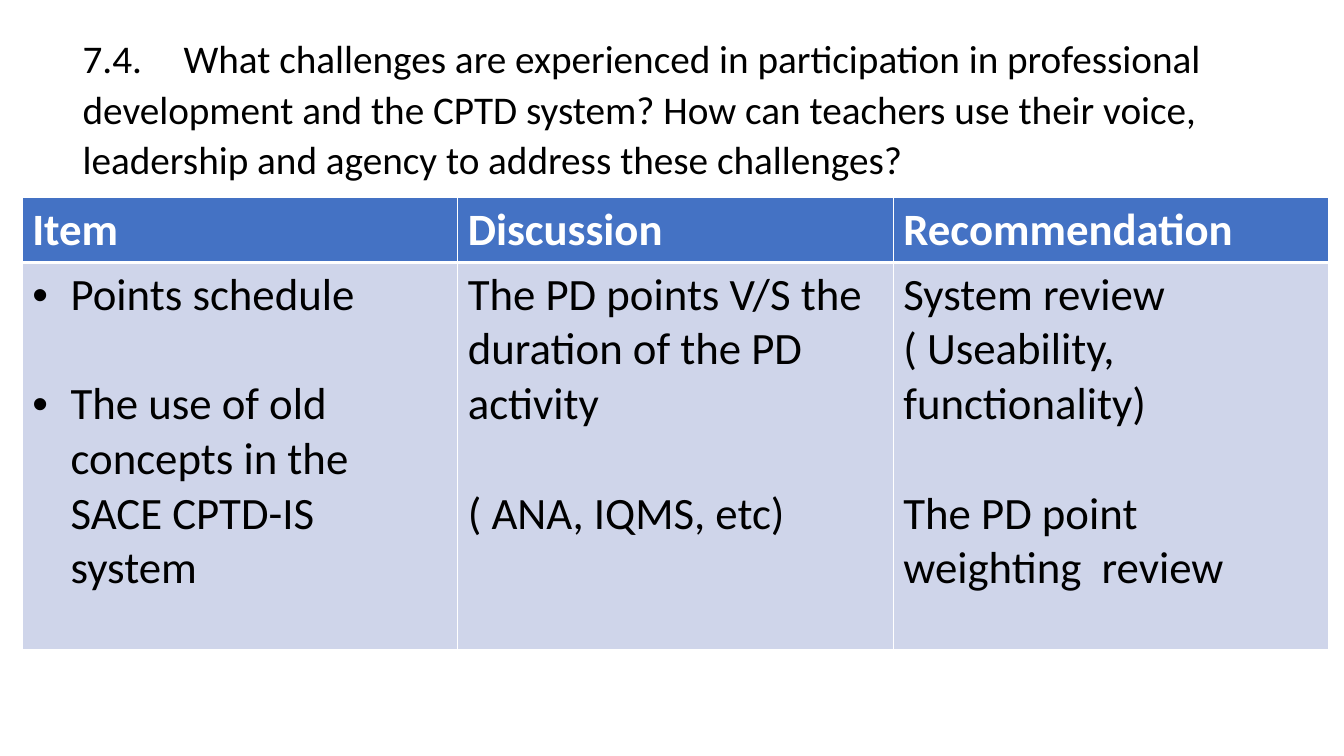
import pptx
import pptx.dml.color
import pptx.enum.text
import pptx.oxml
import pptx.oxml.ns
import pptx.util

TITLE = ("7.4.\tWhat challenges are experienced in participation in professional "
         "development and the CPTD system? How can teachers use their voice, "
         "leadership and agency to address these challenges?")
HEADINGS = ["Item", "Discussion", "Recommendation"]
# Each cell holds groups of paragraphs; a one-line gap separates the groups.
DETAILS = [
    [["Points schedule"], ["The use of old concepts in the SACE CPTD-IS system"]],
    [["The PD points V/S the duration of the PD activity"], ["( ANA, IQMS, etc)"]],
    [["System review", "( Useability, functionality)"],
     ["The PD point weighting  review"]],
]
BULLETED_COLUMN = 0

FONT, TITLE_SIZE, TABLE_SIZE = "Calibri", 28, 32
LINE_GAP = TABLE_SIZE * 1.22
BLACK, WHITE, BLUE, PALE_BLUE = "000000", "FFFFFF", "4472C4", "CFD5EA"
LEFT, TABLE_TOP, COLUMN_WIDTH = 0.22, 1.96, 4.32
ROW_HEIGHTS = [0.63, 3.84]
INDENT = 0.38

Inches, Pt = pptx.util.Inches, pptx.util.Pt


def colour(value):
    return pptx.dml.color.RGBColor.from_string(value)


def add_xml(parent, xml):
    namespace = pptx.oxml.ns.nsdecls("a")
    parent.append(pptx.oxml.parse_xml(xml.replace(">", f" {namespace}>", 1)))


def add_span(para, text, size, ink, bold=False):
    span = para.add_run()
    span.text = text
    span.font.name, span.font.size, span.font.bold = FONT, Pt(size), bold
    span.font.color.rgb = colour(ink)


def style_cell(cell, fill, bottom_width):
    properties = cell._tc.get_or_add_tcPr()
    for side, width in zip("LRTB", (1, 1, 1, bottom_width)):
        add_xml(properties, f'<a:ln{side} w="{Pt(width)}"><a:solidFill>'
                            f'<a:srgbClr val="{WHITE}"/></a:solidFill></a:ln{side}>')
    cell.fill.solid()
    cell.fill.fore_color.rgb = colour(fill)


def add_bullet(para):
    properties = para._p.get_or_add_pPr()
    properties.set("marL", str(Inches(INDENT)))
    properties.set("indent", str(-Inches(INDENT)))
    add_xml(properties, '<a:buFont typeface="Arial"></a:buFont>')
    add_xml(properties, '<a:buChar char="•"></a:buChar>')


def fill_cell(cell, groups, ink, bold=False, bulleted=False):
    para = None
    for group in groups:
        for position, text in enumerate(group):
            first = para is None
            para = cell.text_frame.paragraphs[0] if first else cell.text_frame.add_paragraph()
            if position == 0 and not first:
                para.space_before = Pt(LINE_GAP)
            if bulleted:
                add_bullet(para)
            add_span(para, text, TABLE_SIZE, ink, bold)


def add_title(page):
    title = page.shapes.title
    title.left, title.top = Inches(LEFT), Inches(0.26)
    title.width, title.height = Inches(12.57), Inches(1.59)
    frame = title.text_frame
    frame.word_wrap = True
    frame.auto_size = pptx.enum.text.MSO_AUTO_SIZE.NONE
    frame.vertical_anchor = pptx.enum.text.MSO_ANCHOR.TOP
    para = frame.paragraphs[0]
    para.alignment = pptx.enum.text.PP_ALIGN.LEFT
    para.line_spacing, para.space_after = 1.07, Pt(7.5)
    properties = para._p.get_or_add_pPr()
    properties.set("marL", str(Inches(0.5)))
    properties.set("indent", "0")
    add_xml(properties, f'<a:tabLst><a:tab pos="{Inches(1.25)}" algn="l"/></a:tabLst>')
    add_span(para, TITLE, TITLE_SIZE, BLACK)


def add_discussion_table(page):
    count = len(HEADINGS)
    table = page.shapes.add_table(
        len(ROW_HEIGHTS), count, Inches(LEFT), Inches(TABLE_TOP),
        Inches(COLUMN_WIDTH * count), Inches(sum(ROW_HEIGHTS))).table
    for row, height in zip(table.rows, ROW_HEIGHTS):
        row.height = Inches(height)
    for index, (heading, groups) in enumerate(zip(HEADINGS, DETAILS)):
        table.columns[index].width = Inches(COLUMN_WIDTH)
        header, body = table.cell(0, index), table.cell(1, index)
        style_cell(header, BLUE, 3)
        fill_cell(header, [[heading]], WHITE, bold=True)
        style_cell(body, PALE_BLUE, 1)
        fill_cell(body, groups, BLACK, bulleted=index == BULLETED_COLUMN)


def main():
    deck = pptx.Presentation()
    deck.slide_width, deck.slide_height = Inches(13.33), Inches(7.5)
    page = deck.slides.add_slide(deck.slide_layouts[5])
    add_title(page)
    add_discussion_table(page)
    deck.save("out.pptx")


if __name__ == "__main__":
    main()
